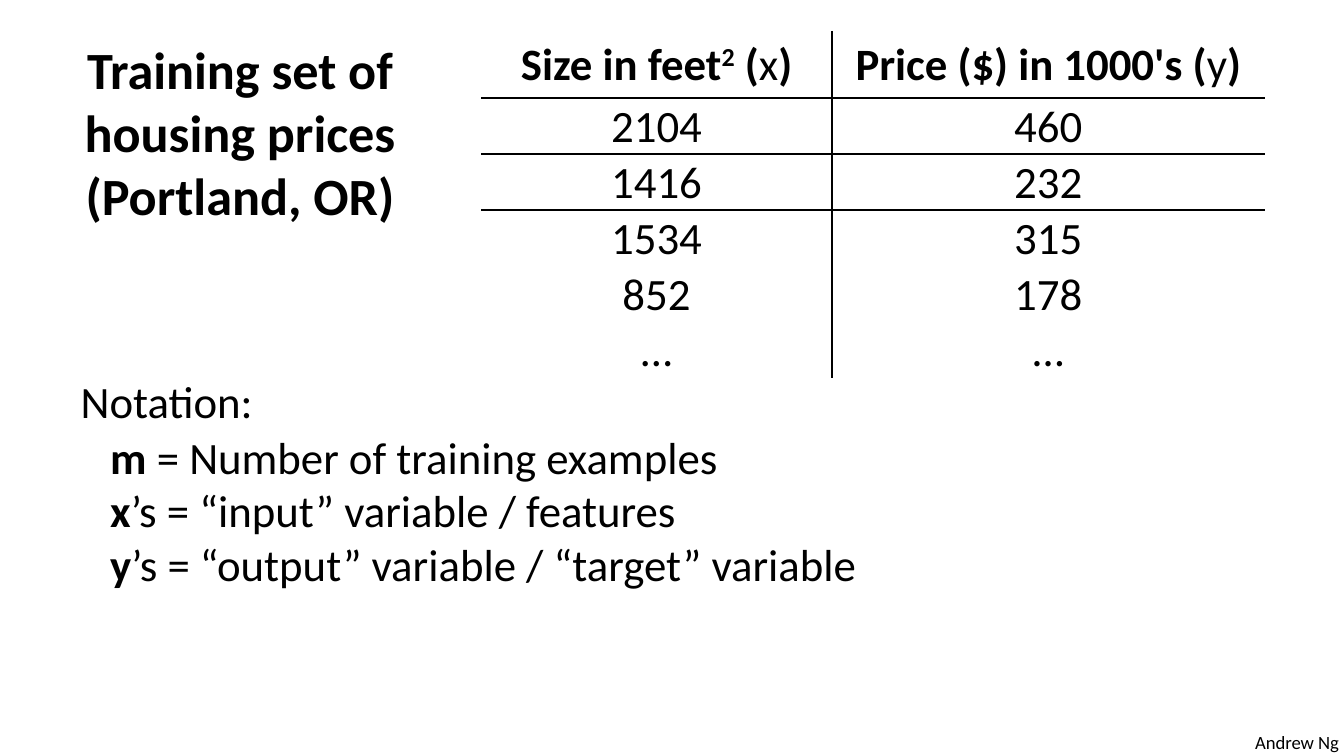
from dataclasses import dataclass
from typing import NamedTuple

from lxml.etree import SubElement as Sub
from pptx import Presentation as Deck
from pptx.dml.color import RGBColor as Rgb
from pptx.enum.text import MSO_ANCHOR as Anchor, MSO_AUTO_SIZE as Fit, PP_ALIGN as Align
from pptx.oxml.ns import qn
from pptx.util import Inches, Pt


@dataclass(frozen=True)
class Theme:
    font: str = "Calibri"
    ink: str = "000000"
    title: int = 28
    text: int = 24
    foot: int = 10
    rule: int = 1
    grid: str = "{2D5ABB26-0587-4C30-8999-92F81FD0307C}"  # no style, no grid


class Span(NamedTuple):
    text: str
    bold: bool = False
    base: int = 0


class Line(NamedTuple):
    spans: list[Span]
    indent: float = 0
    before: int = 0


class Box(NamedTuple):
    left: float
    top: float
    width: float
    height: float


THEME = Theme()

TITLE = ["Training set of", "housing prices", "(Portland, OR)"]
HEADS = [
    [Span("Size in feet", True), Span("2", True, 30), Span(" (", True),
     Span("x"), Span(")", True)],
    [Span("Price ($) in 1000's (", True), Span("y"), Span(")", True)],
]
HOUSES = [("2104", "460"), ("1416", "232"), ("1534", "315"),
          ("852", "178"), ("…", "…")]
TERMS = [("m", " = Number of training examples"),
         ("x", "’s = “input” variable / features"),
         ("y", "’s = “output” variable / “target” variable")]


def assign(item, values: dict) -> None:
    for name, value in values.items():
        setattr(item, name, value)


def place(shape, box: Box) -> None:
    assign(shape, {name: Inches(size) for name, size in box._asdict().items()})


def write(frame, lines: list[Line], size: int, align=Align.LEFT) -> None:
    """Fill a text frame with plain, unbulleted paragraphs."""
    for i, line in enumerate(lines):
        para = frame.add_paragraph() if i else frame.paragraphs[0]
        assign(para, {"alignment": align, "space_before": Pt(line.before),
                      "space_after": Pt(0)})
        props = para._p.get_or_add_pPr()
        props.set("marL", str(Inches(line.indent)))
        props.set("indent", "0")
        Sub(props, qn("a:buNone"))
        for span in line.spans:
            run = para.add_run()
            assign(run, {"text": span.text})
            assign(run.font, {"name": THEME.font, "size": Pt(size),
                              "bold": span.bold})
            run.font.color.rgb = Rgb.from_string(THEME.ink)
            if span.base:
                run._r.get_or_add_rPr().set("baseline", str(span.base * 1000))


def border(cell, sides: str) -> None:
    """Draw the given sides, from L, R, T and B in that order."""
    for side in sides:
        edge = Sub(cell._tc.get_or_add_tcPr(), qn(f"a:ln{side}"),
                   w=str(Pt(THEME.rule)))
        Sub(Sub(edge, qn("a:solidFill")), qn("a:srgbClr"), val=THEME.ink)


def draw_table(slide, box: Box, widths: list[float], heights: list[float]) -> None:
    rows = [HEADS] + [[[Span(value)] for value in house] for house in HOUSES]
    grid = slide.shapes.add_table(len(rows), len(widths), *map(Inches, box)).table
    assign(grid, {"first_row": False, "horz_banding": False})
    grid._tbl.tblPr.find(qn("a:tableStyleId")).text = THEME.grid
    for col, width in zip(grid.columns, widths):
        col.width = Inches(width)
    for r, spans in enumerate(rows):
        grid.rows[r].height = Inches(heights[r])
        for c, text in enumerate(spans):
            cell = grid.cell(r, c)
            pad = Inches(0.01)
            assign(cell, {
                "margin_left": pad, "margin_right": pad,
                "margin_top": pad, "margin_bottom": 0,
                "vertical_anchor": Anchor.BOTTOM if r else Anchor.MIDDLE,
            })
            write(cell.text_frame, [Line(text)], THEME.text, Align.CENTER)
            # Rules run between the columns and under the first two rows
            across = ("T" if r in (1, 2) else "") + ("B" if r in (0, 1) else "")
            border(cell, ("L" if c else "R") + across)
            cell.fill.background()


def main() -> None:
    deck = Deck()
    wide = Inches(10)
    assign(deck, {"slide_width": wide, "slide_height": wide * 9 // 16})
    slide = deck.slides.add_slide(deck.slide_layouts[1])
    title, body = slide.placeholders
    fixed = {"auto_size": Fit.NONE, "vertical_anchor": Anchor.TOP,
             "word_wrap": True}

    # Title
    place(title, Box(0.5, 0.23, 2.57, 1.51))
    assign(title.text_frame, fixed)
    write(title.text_frame, [Line([Span(text, True)]) for text in TITLE],
          THEME.title, Align.CENTER)

    # Notation list
    place(body, Box(0.5, 2.73, 6.03, 1.75))
    assign(body.text_frame, fixed)
    terms = [Line([Span(sign, True), Span(text)], 0.22, 0 if i else 1)
             for i, (sign, text) in enumerate(TERMS)]
    write(body.text_frame, [Line([Span("Notation:")])] + terms, THEME.text)

    # Housing prices: the lower rows grow to fit their text
    draw_table(slide, Box(3.58, 0.23, 5.83, 2.54), [2.61, 3.22],
               [0.5] + [0.32] * len(HOUSES))

    # Author
    foot = slide.shapes.add_textbox(*map(Inches, Box(9.24, 5.39, 0.84, 0.27)))
    foot.text_frame.word_wrap = False
    write(foot.text_frame, [Line([Span("Andrew Ng")])], THEME.foot)

    deck.save("out.pptx")


if __name__ == "__main__":
    main()
